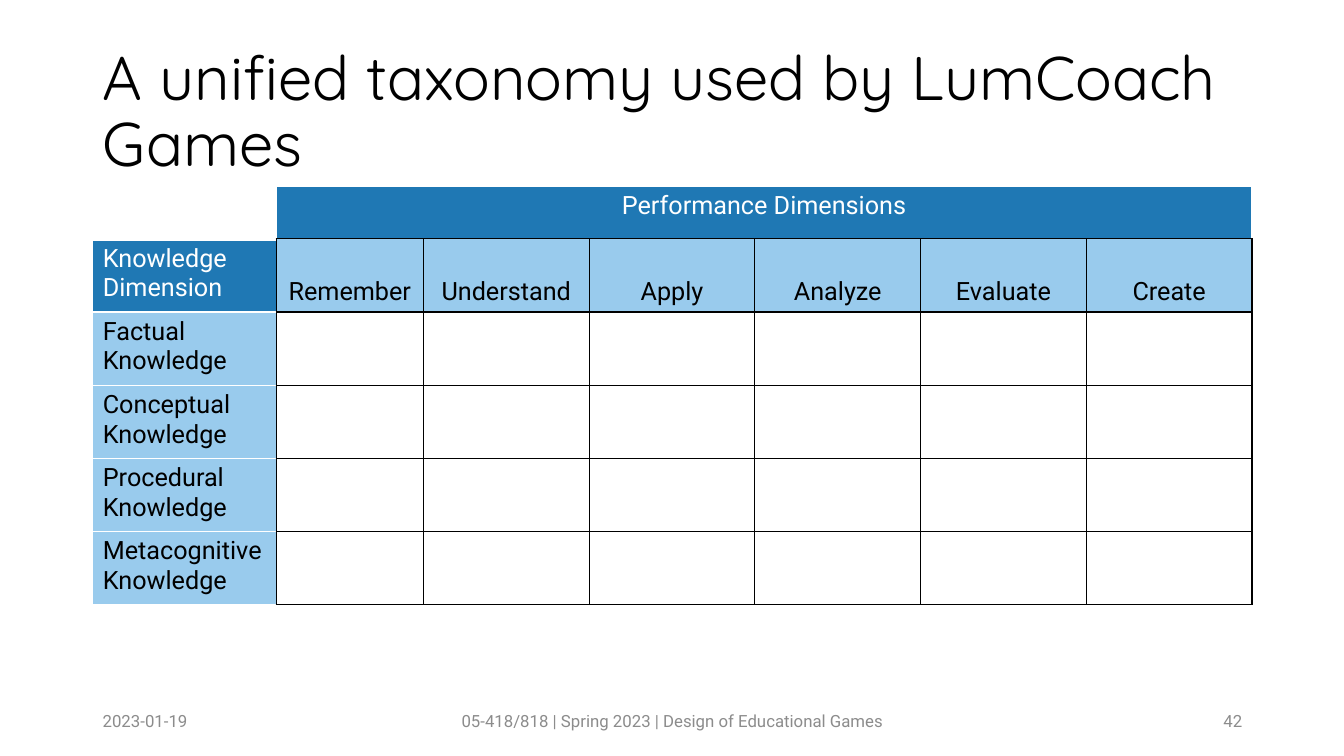
from lxml.etree import SubElement
from pptx import Presentation
from pptx.dml.color import RGBColor
from pptx.enum.text import MSO_ANCHOR as Anchor, MSO_AUTO_SIZE as AutoSize, PP_ALIGN as Align
from pptx.oxml.ns import qn
from pptx.util import Inches, Pt

COLORS = {
    "ink": "000000",
    "paper": "FFFFFF",
    "header": "1F78B4",
    "label": "99CBED",
    "footer": "8C8C8C",
}
TITLE_FONT, BODY_FONT = "Quicksand", "Roboto"
PERFORMANCE = ["Remember", "Understand", "Apply", "Analyze", "Evaluate", "Create"]
KNOWLEDGE = ["Factual", "Conceptual", "Procedural", "Metacognitive"]
LABEL_WIDTH, REMEMBER_WIDTH = 1.82, 1.46
HEADER_HEIGHT = 0.52


def write(frame, text, font, size, color, align=Align.LEFT):
    para = frame.paragraphs[0]
    para.text = text
    para.alignment = align
    para.font.name = font
    para.font.size = Pt(size)
    para.font.color.rgb = RGBColor.from_string(COLORS[color])
    return para


def place(shape, box):
    shape.left, shape.top, shape.width, shape.height = map(Inches, box)


def add_title(page, box, text):
    title = page.shapes.title
    place(title, box)
    frame = title.text_frame
    frame.word_wrap = True
    frame.auto_size = AutoSize.NONE
    frame.vertical_anchor = Anchor.MIDDLE
    write(frame, text, TITLE_FONT, 44, "ink").line_spacing = 0.9


def set_borders(cell, left, right, top, bottom, bottom_width=1):
    properties = cell._tc.get_or_add_tcPr()
    sides = [("L", left, 1), ("R", right, 1), ("T", top, 1), ("B", bottom, bottom_width)]
    for index, (side, color, width) in enumerate(sides):
        line = SubElement(properties, qn(f"a:ln{side}"), w=str(Pt(width)))
        fill = SubElement(line, qn("a:solidFill"))
        SubElement(fill, qn("a:srgbClr"), val=COLORS[color])
        properties.insert(index, line)


def fill_cell(cell, color, text="", text_color="ink", align=Align.LEFT, anchor=Anchor.TOP):
    cell.fill.solid()
    cell.fill.fore_color.rgb = RGBColor.from_string(COLORS[color])
    cell.vertical_anchor = anchor
    write(cell.text_frame, text, BODY_FONT, 18, text_color, align)


def add_taxonomy(page, box):
    left, top, width, height = box
    row_count, column_count = len(KNOWLEDGE) + 2, len(PERFORMANCE) + 1
    frame = page.shapes.add_table(row_count, column_count, *map(Inches, box))
    table = frame.table
    table.first_row = table.horz_banding = False

    level_width = (width - LABEL_WIDTH - REMEMBER_WIDTH) / (column_count - 2)
    widths = [LABEL_WIDTH, REMEMBER_WIDTH] + [level_width] * (column_count - 2)
    for column, column_width in zip(table.columns, widths):
        column.width = Inches(column_width)
    row_height = (height - HEADER_HEIGHT) / (row_count - 1)
    for row, size in zip(table.rows, [HEADER_HEIGHT] + [row_height] * (row_count - 1)):
        row.height = Inches(size)

    corner = table.cell(0, 0)
    corner.fill.background()
    set_borders(corner, "paper", "paper", "paper", "paper", 3)

    heading = table.cell(0, 1)
    heading.merge(table.cell(0, column_count - 1))
    fill_cell(heading, "header", "Performance Dimensions", "paper", Align.CENTER)
    for column in range(1, column_count):
        set_borders(table.cell(0, column), "paper", "paper", "paper", "ink")

    fill_cell(table.cell(1, 0), "header", "Knowledge Dimension", "paper")
    for row, kind in enumerate(KNOWLEDGE, 2):
        fill_cell(table.cell(row, 0), "label", f"{kind} Knowledge")
    for column, level in enumerate(PERFORMANCE, 1):
        fill_cell(table.cell(1, column), "label", level, "ink", Align.CENTER, Anchor.BOTTOM)

    for row in range(1, row_count):
        set_borders(table.cell(row, 0), "paper", "ink", "paper", "paper")
        for column in range(1, column_count):
            cell = table.cell(row, column)
            if row > 1:
                fill_cell(cell, "paper")
            set_borders(cell, "ink", "ink", "ink", "ink")


def add_footer(page, box):
    left, top, width, height = box
    side, middle = 3, 4.5
    parts = [
        ("2023-01-19", left, side, Align.LEFT),
        ("05-418/818 | Spring 2023 | Design of Educational Games",
         left + (width - middle) / 2, middle, Align.CENTER),
        ("42", left + width - side, side, Align.RIGHT),
    ]
    for text, part_left, part_width, align in parts:
        shape = page.shapes.add_textbox(*map(Inches, (part_left, top, part_width, height)))
        shape.text_frame.word_wrap = True
        shape.text_frame.vertical_anchor = Anchor.MIDDLE
        write(shape.text_frame, text, BODY_FONT, 12, "footer", align)


def main():
    deck = Presentation()
    deck.slide_width, deck.slide_height = Inches(13.33), Inches(7.5)
    page = deck.slides.add_slide(deck.slide_layouts.get_by_name("Title Only"))
    add_title(page, (0.92, 0.4, 11.5, 1.45), "A unified taxonomy used by LumCoach Games")
    add_taxonomy(page, (0.92, 1.85, 11.5, 4.15))
    add_footer(page, (0.92, 6.95, 11.5, 0.4))
    deck.save("out.pptx")


if __name__ == "__main__":
    main()
